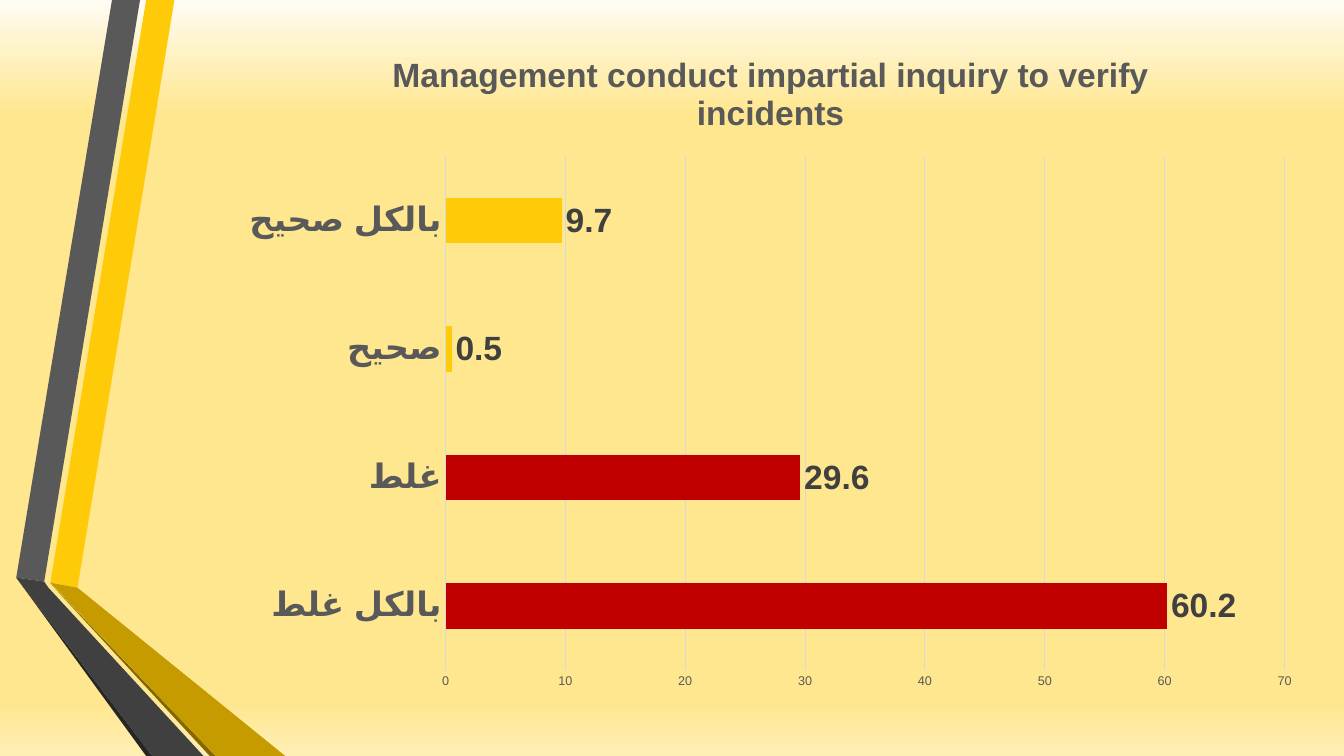
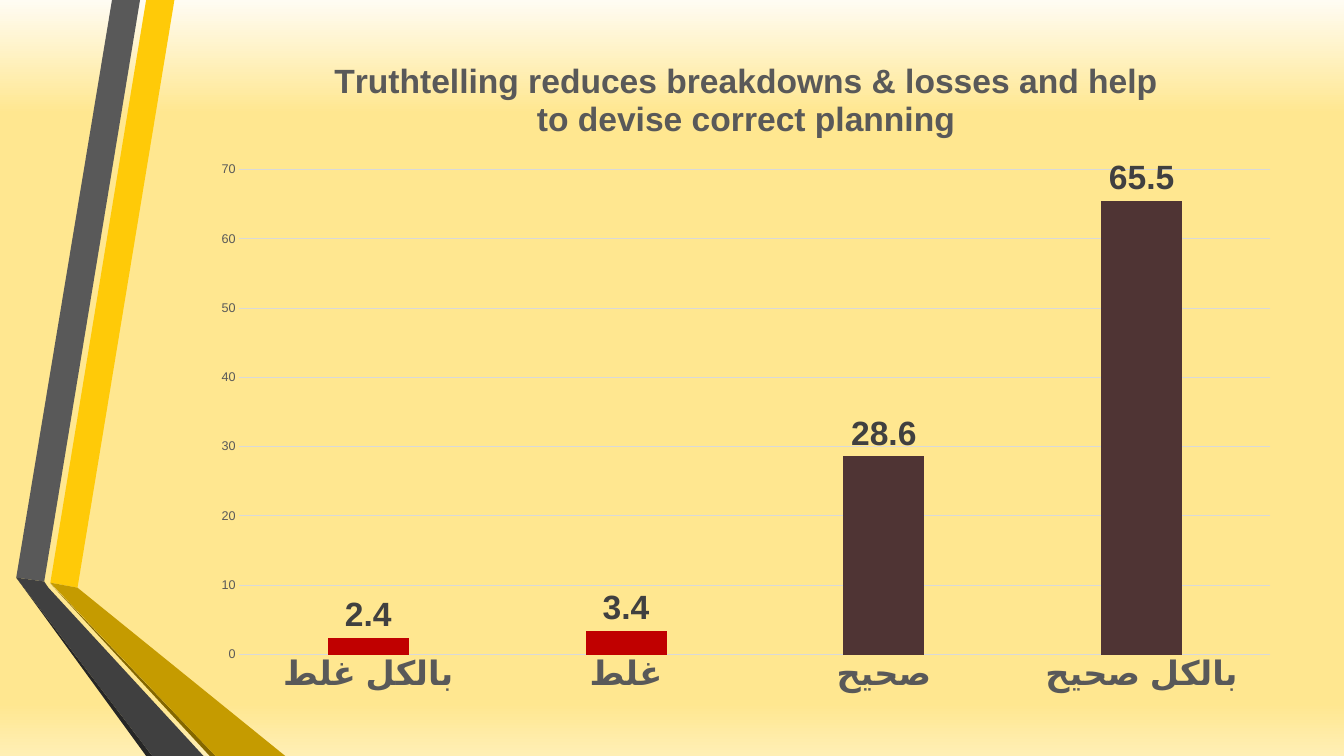
from dataclasses import dataclass

from lxml import etree
from pptx import Presentation
from pptx.chart.data import CategoryChartData
from pptx.dml.color import RGBColor
from pptx.enum.chart import XL_CHART_TYPE, XL_LABEL_POSITION, XL_TICK_MARK
from pptx.oxml.ns import qn
from pptx.util import Pt

BAR = XL_CHART_TYPE.BAR_CLUSTERED
COLUMN = XL_CHART_TYPE.COLUMN_CLUSTERED
OUTSIDE_END = XL_LABEL_POSITION.OUTSIDE_END
NO_TICK = XL_TICK_MARK.NONE

SLIDE_WIDTH, SLIDE_HEIGHT = 960, 540
BLANK_LAYOUT = 6


@dataclass(frozen=True)
class Theme:
    font: str = "Arial"
    heading_size: int = 24
    base_size: int = 10
    scale_size: int = 9
    line_width: float = 0.75
    base: str = "000000"
    text: str = "595959"
    label: str = "404040"
    grid: str = "D9D9D9"
    gold: str = "FFCA08"
    brown: str = "4F3434"
    red: str = "C00000"
    # Background stops from top to bottom: percent, colour
    backdrop: tuple = ((0, "FFFCF3"), (15, "FFE790"), (93, "FFE790"), (100, "FFEFB5"))


THEME = Theme()

# Folded ribbons at the left edge: colour and corners, back to front
RIBBONS = (
    (THEME.gold, ((36, 416.2), (55.4, 419.8), (124.6, 0), (104.4, 0))),
    (THEME.text, ((100, 0), (80, 0), (11.6, 412.6), (31.6, 415.4))),
    ("262626", ((11.6, 412.6), (104.4, 540), (108.8, 540))),
    ("846700", ((36, 416.8), (149.8, 540), (154, 540))),
    ("C59B00", ((36, 416.2), (154, 540), (203.8, 540), (55.4, 419.8))),
    ("404040", ((145.4, 540), (34.6, 419.8), (31.6, 415.4), (11.6, 412.6), (108.8, 540))),
)

# Survey answers, from "entirely wrong" to "entirely right"
ANSWERS = ("بالکل غلط", "غلط", "صحیح", "بالکل صحیح")
WRONG_ANSWERS = 2


@dataclass(frozen=True)
class Survey:
    statement: str
    percentages: tuple
    kind: int
    right_color: str
    frame: tuple
    gap: int
    overlap: int = 0


SURVEYS = (
    Survey("Management conduct impartial inquiry to verify incidents",
           (60.2, 29.6, 0.5, 9.7), BAR, THEME.gold, (162.7, 20.2, 775.4, 481.7), 182),
    Survey("Truthtelling reduces breakdowns & losses and help to devise correct planning",
           (2.4, 3.4, 28.6, 65.5), COLUMN, THEME.brown, (142.6, 24.5, 780.5, 479.5), 219, -27),
)


def paint(fill, color):
    fill.solid()
    fill.fore_color.rgb = RGBColor.from_string(color)


def style_font(font, size, color, bold=False):
    font.name = THEME.font
    font.size = Pt(size)
    font.bold = bold
    font.color.rgb = RGBColor.from_string(color)


def style_line(line):
    line.width = Pt(THEME.line_width)
    paint(line.fill, THEME.grid)


def set_backdrop(layout):
    fill = layout.background.fill
    fill.gradient()
    fill.gradient_angle = 270
    stops = next(layout.element.iter(qn("a:gsLst")))
    for stop in list(stops):
        stops.remove(stop)
    for percent, color in THEME.backdrop:
        stop = etree.SubElement(stops, qn("a:gs"), pos=str(percent * 1000))
        etree.SubElement(stop, qn("a:srgbClr"), val=color)


def add_ribbon(slide, color, corners):
    start, *others = [(Pt(x), Pt(y)) for x, y in corners]
    outline = slide.shapes.build_freeform(*start)
    outline.add_line_segments(others, close=True)
    ribbon = outline.convert_to_shape()
    ribbon.shadow.inherit = False
    paint(ribbon.fill, color)
    ribbon.line.fill.background()
    return ribbon


def move_ribbons_to_layout(slide, layout):
    """Freeforms can only be drawn on a slide, so draw there and hand them over."""
    for placeholder in list(layout.placeholders):
        layout.shapes.element.remove(placeholder.element)
    for ribbon in [add_ribbon(slide, *ribbon) for ribbon in RIBBONS]:
        layout.shapes.element.append(ribbon.element)


def style_axes(chart):
    answers = chart.category_axis
    answers.major_tick_mark = NO_TICK
    style_font(answers.tick_labels.font, THEME.heading_size, THEME.text, bold=True)
    style_line(answers.format.line)

    scale = chart.value_axis
    scale.major_tick_mark = NO_TICK
    scale.minimum_scale, scale.maximum_scale, scale.major_unit = 0, 70, 10
    style_font(scale.tick_labels.font, THEME.scale_size, THEME.text)
    scale.format.line.fill.background()
    style_line(scale.major_gridlines.format.line)


def style_bars(plot, survey):
    plot.gap_width = survey.gap
    plot.overlap = survey.overlap
    plot.vary_by_categories = False
    bars = plot.series[0]
    bars.invert_if_negative = False
    paint(bars.format.fill, survey.right_color)
    for index in range(WRONG_ANSWERS):
        paint(bars.points[index].format.fill, THEME.red)

    labels = bars.data_labels
    labels.show_value = True
    labels.position = OUTSIDE_END
    style_font(labels.font, THEME.heading_size, THEME.label, bold=True)


def add_survey_chart(slide, survey):
    results = CategoryChartData()
    results.categories = ANSWERS
    results.add_series("Series 1", survey.percentages)
    frame = [Pt(length) for length in survey.frame]
    chart = slide.shapes.add_chart(survey.kind, *frame, results).chart
    style_font(chart.font, THEME.base_size, THEME.base)
    chart.has_legend = False

    statement = chart.chart_title.text_frame.paragraphs[0].add_run()
    statement.text = survey.statement
    style_font(statement.font, THEME.heading_size, THEME.text, bold=True)
    chart.chart_title.include_in_layout = False

    style_axes(chart)
    style_bars(chart.plots[0], survey)


def main():
    deck = Presentation()
    deck.slide_width, deck.slide_height = Pt(SLIDE_WIDTH), Pt(SLIDE_HEIGHT)

    # Shared look
    layout = deck.slide_layouts[BLANK_LAYOUT]
    set_backdrop(layout)
    slides = [deck.slides.add_slide(layout) for _ in SURVEYS]
    move_ribbons_to_layout(slides[0], layout)

    # One chart per slide
    for slide, survey in zip(slides, SURVEYS):
        add_survey_chart(slide, survey)
    deck.save("out.pptx")


if __name__ == "__main__":
    main()
